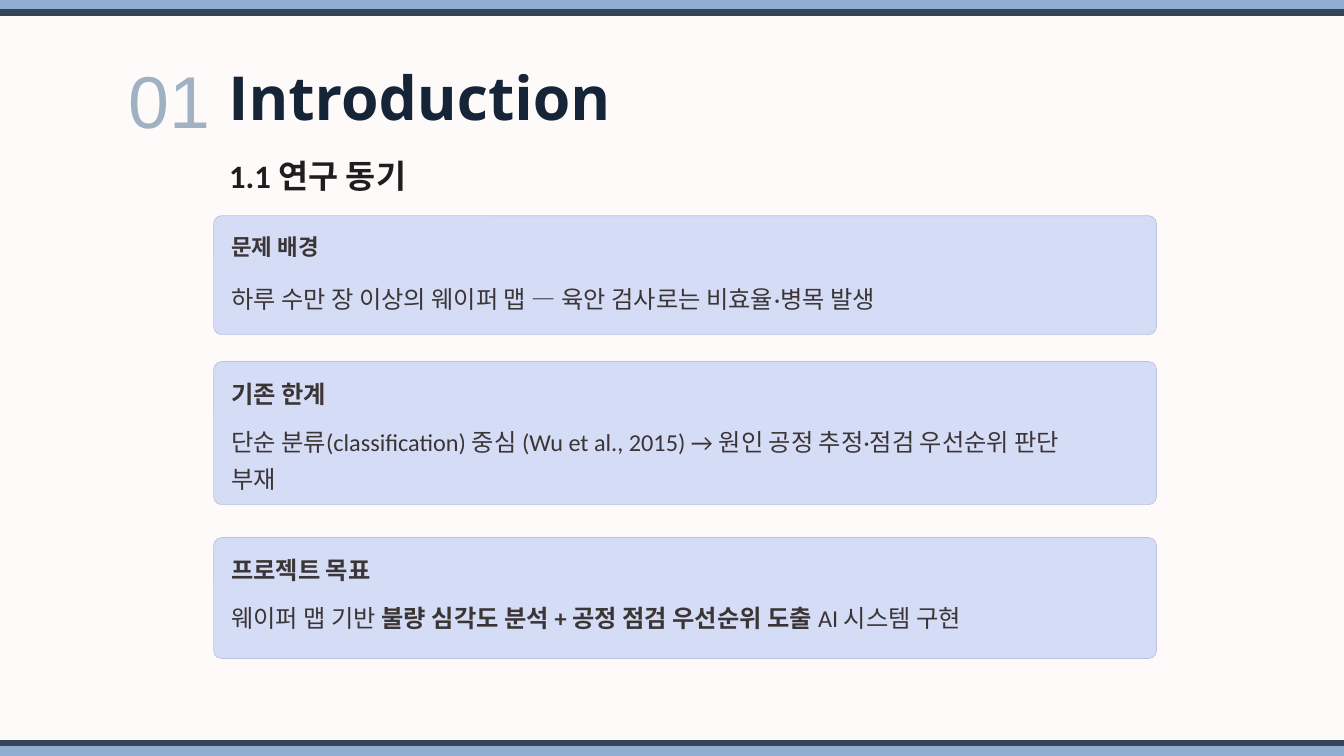
from pptx import Presentation
from pptx.dml.color import RGBColor
from pptx.enum.shapes import MSO_CONNECTOR, MSO_SHAPE
from pptx.enum.text import MSO_ANCHOR, MSO_AUTO_SIZE, PP_ALIGN
from pptx.oxml.ns import qn
from pptx.util import Inches, Pt
from lxml import etree

COLORS = {
    "background": "FFFAFA", "band": "8FADD1", "rule": "354457",
    "title": "152437", "number": "A0B1C4", "subtitle": "1F1E1E",
    "card": "D5DCF6", "card_line": "BBC2DC", "text": "3B3535",
}
WIDTH, HEIGHT = 20, 11.25
BAND_HEIGHT = 0.15
CARD_LEFT, CARD_WIDTH = 3.18, 14.03
TEXT_LEFT = 3.44
BANDS = [(0, 0.19), (HEIGHT - BAND_HEIGHT, 11.06)]
CARDS = [
    {"top": 3.21, "height": 1.77, "heading": "문제 배경", "size": 24, "offset": 0.9,
     "body": [("하루 수만 장 이상의 웨이퍼 맵 — 육안 검사로는 비효율·병목 발생", False)]},
    {"top": 5.38, "height": 2.13, "heading": "기존 한계", "size": 26, "offset": 0.86,
     "body": [("단순 분류(classification) 중심 (Wu et al., 2015) → "
               "원인 공정 추정·점검 우선순위 판단 부재", False)]},
    {"top": 8, "height": 1.8, "heading": "프로젝트 목표", "size": 26, "offset": 0.86,
     "body": [("웨이퍼 맵 기반 ", False),
              ("불량 심각도 분석 + 공정 점검 우선순위 도출 ", True),
              ("AI 시스템 구현", False)]},
]


def color(name):
    return RGBColor.from_string(COLORS[name])


def write(shape, box, runs, size, font, color_name, spacing, align=PP_ALIGN.LEFT):
    shape.left, shape.top, shape.width, shape.height = map(Inches, box)
    frame = shape.text_frame
    frame.word_wrap = True
    frame.auto_size = MSO_AUTO_SIZE.NONE
    frame.vertical_anchor = MSO_ANCHOR.TOP
    frame.margin_left = frame.margin_top = frame.margin_right = frame.margin_bottom = 0
    paragraph = frame.paragraphs[0]
    paragraph.alignment = align
    paragraph.line_spacing = spacing
    for text, bold in runs:
        run = paragraph.add_run()
        run.text = text
        run.font.size = Pt(size)
        run.font.name = font
        run.font.bold = bold
        run.font.color.rgb = color(color_name)


def add_text(slide, box, *style):
    write(slide.shapes.add_textbox(*map(Inches, box)), box, *style)


def add_block(slide, kind, box, fill):
    shape = slide.shapes.add_shape(kind, *map(Inches, box))
    shape.shadow.inherit = False
    shape.fill.solid()
    shape.fill.fore_color.rgb = color(fill)
    shape.line.fill.background()
    return shape


def add_band(slide, top, rule_y):
    add_block(slide, MSO_SHAPE.RECTANGLE, (0, top, WIDTH, BAND_HEIGHT), "band")
    rule = slide.shapes.add_connector(
        MSO_CONNECTOR.STRAIGHT, *map(Inches, (0, rule_y, WIDTH, rule_y)))
    rule.line.color.rgb = color("rule")
    rule.line.width = Pt(7)
    etree.SubElement(rule._element.spPr, qn("a:effectLst"))


def add_card(slide, card):
    top, height = card["top"], card["height"]
    shape = add_block(slide, MSO_SHAPE.ROUNDED_RECTANGLE,
                      (CARD_LEFT, top, CARD_WIDTH, height), "card")
    shape.adjustments[0] = 0.12 / height
    shape.line.color.rgb = color("card_line")
    shape.line.width = Pt(0.75)
    add_text(slide, (TEXT_LEFT, top + 0.25, 3.23, 0.4), [(card["heading"], True)],
             card["size"], "Calibri", "text", 1.04)
    add_text(slide, (TEXT_LEFT, top + card["offset"], 12.81, 0.72), card["body"],
             26, "Calibri", "text", 1.27)


def main():
    """Build the introduction slide."""
    presentation = Presentation()
    presentation.slide_width, presentation.slide_height = Inches(WIDTH), Inches(HEIGHT)
    slide = presentation.slides.add_slide(presentation.slide_layouts[5])
    slide.background.fill.solid()
    slide.background.fill.fore_color.rgb = color("background")
    for top, rule_y in BANDS:
        add_band(slide, top, rule_y)
    write(slide.shapes.title, (3.4, 0.45, 14.94, 1.09), [("Introduction", True)],
          65, "Open Sans", "title", 1.4)
    add_text(slide, (1.72, 0.29, 1.61, 1.54), [("01", False)],
             78.7, "Arial", "number", 1.4, PP_ALIGN.CENTER)
    add_text(slide, (3.41, 2.29, 8.06, 0.88), [("1.1 연구 동기", True)],
             35, "Calibri", "subtitle", 1.04)
    for card in CARDS:
        add_card(slide, card)
    presentation.save("out.pptx")


if __name__ == "__main__":
    main()
